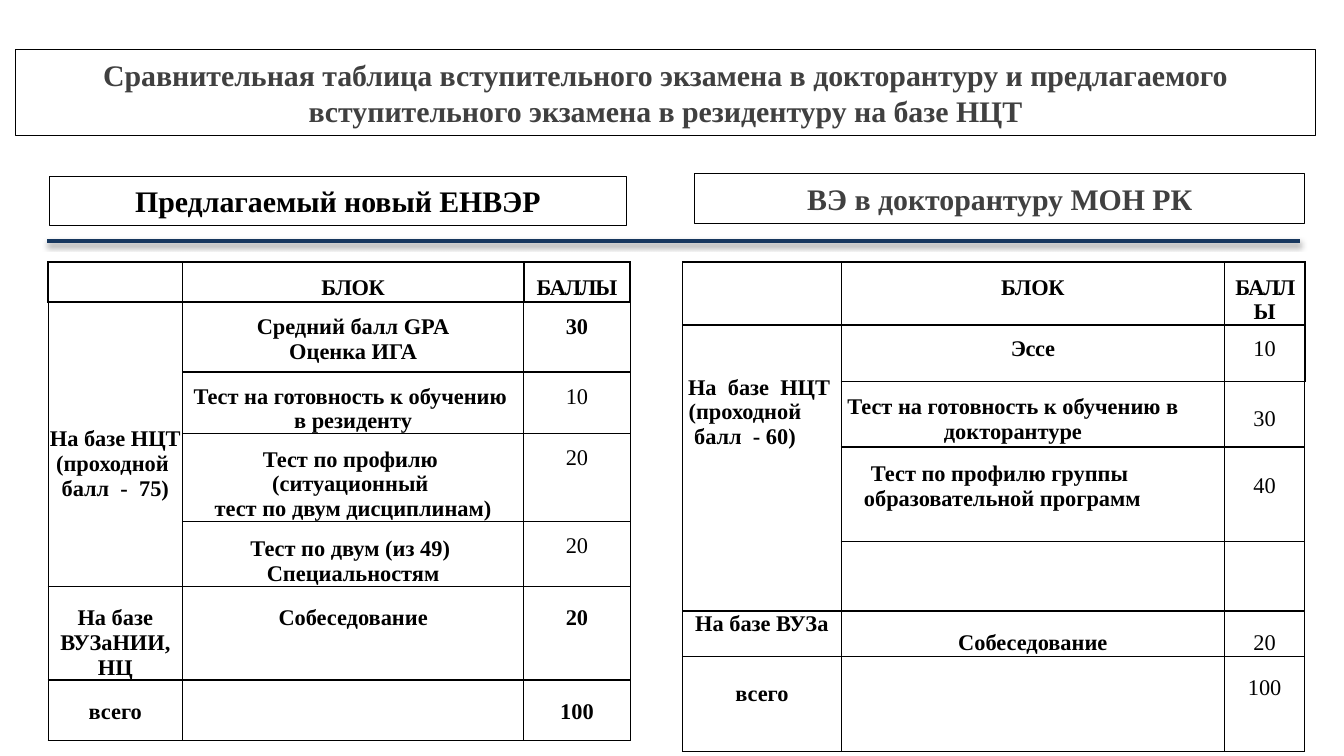
import lxml.etree
import pptx
import pptx.dml.color
import pptx.enum.shapes
import pptx.enum.text
import pptx.oxml
import pptx.oxml.ns
import pptx.util

Cm = pptx.util.Cm
Pt = pptx.util.Pt
FONT = "Times New Roman"
HEX = {"ink": "000000", "grey": "404040", "navy": "17375E", "paper": "FFFFFF"}
NS = pptx.oxml.ns.nsdecls("a")


def tint(name):
    return pptx.dml.color.RGBColor.from_string(HEX[name])


def write(par, text, size, color="ink", bold=True, track=0):
    """Add one centred run to a paragraph."""
    par.alignment = pptx.enum.text.PP_ALIGN.CENTER
    run = par.add_run()
    run.text = text
    font = run.font
    font.name, font.size, font.bold = FONT, Pt(size), bold
    font.color.rgb = tint(color)
    if track:
        font._element.set("spc", str(round(track * 100)))


def frame(box, place, text, color):
    """Place an outlined caption box and fill in its text."""
    box.left, box.top, box.width, box.height = map(Cm, place)
    box.line.color.rgb = tint("ink")
    box.line.width = Pt(0.5)
    body = box.text_frame
    body.word_wrap = True
    body.auto_size = pptx.enum.text.MSO_AUTO_SIZE.NONE
    body.vertical_anchor = pptx.enum.text.MSO_ANCHOR.MIDDLE
    write(body.paragraphs[0], text, 16, color)


def rule(slide, start, end, y):
    """Draw the navy divider with its soft shadow."""
    line = slide.shapes.add_connector(
        pptx.enum.shapes.MSO_CONNECTOR.STRAIGHT, Cm(start), Cm(y), Cm(end), Cm(y))
    line.line.color.rgb = tint("navy")
    line.line.width = Pt(2)
    line._element.spPr.append(pptx.oxml.parse_xml(
        f'<a:effectLst {NS}><a:outerShdw blurRad="{Pt(3.1)}" dist="{Pt(1.6)}" '
        f'dir="5400000" rotWithShape="0"><a:srgbClr val="{HEX["ink"]}">'
        '<a:alpha val="38000"/></a:srgbClr></a:outerShdw></a:effectLst>'))


def edge(cell, width):
    """Give a cell four black borders."""
    props = cell._tc.get_or_add_tcPr()
    for side in "LRTB":
        props.append(pptx.oxml.parse_xml(
            f'<a:ln{side} {NS} w="{Pt(width)}"><a:solidFill>'
            f'<a:srgbClr val="{HEX["ink"]}"/></a:solidFill></a:ln{side}>'))


def item(text="", top=0.0, bold=True, right=0.0, track=0):
    """Describe one cell; top and right are insets in cm."""
    return {"text": text, "top": top, "bold": bold, "right": right, "track": track}


def fill(cell, data, width):
    edge(cell, width)
    cell.fill.solid()
    cell.fill.fore_color.rgb = tint("paper")
    cell.margin_left = cell.margin_bottom = 0
    cell.margin_top = Cm(data["top"])
    cell.margin_right = Cm(data["right"])
    body = cell.text_frame
    if not data["text"]:
        # Keep empty cells from stretching their row
        body.paragraphs[0]._p.get_or_add_endParaRPr().set("sz", "1200")
        return
    for i, text in enumerate(data["text"].split("\n")):
        par = body.add_paragraph() if i else body.paragraphs[0]
        write(par, text, 12, bold=data["bold"], track=data["track"])


def grid(slide, left, top, cols, rows, cells, thick):
    """Build a table; the first `thick` rows have 1 pt borders."""
    table = slide.shapes.add_table(
        len(rows), len(cols), Cm(left), Cm(top), Cm(sum(cols)), Cm(sum(rows))).table
    for col, size in zip(table.columns, cols):
        col.width = Cm(size)
    for row, size in zip(table.rows, rows):
        row.height = Cm(size)
    for r, line in enumerate(cells):
        for c, data in enumerate(line):
            fill(table.cell(r, c), data, 1 if r < thick else 0.75)
    table.cell(1, 0).merge(table.cell(4, 0))
    return table


def main():
    deck = pptx.Presentation()
    deck.slide_width, deck.slide_height = Cm(25.4), Cm(14.29)
    slide = deck.slides.add_slide(deck.slide_layouts[5])

    # Title and the two captions
    frame(slide.shapes.title, (0.3, 0.94, 24.56, 1.63),
          "Сравнительная таблица вступительного экзамена в докторантуру и предлагаемого "
          "вступительного экзамена в резидентуру на базе НЦТ", "grey")
    for place, text, color in (
            ((0.94, 3.33, 10.9, 0.94), "Предлагаемый новый ЕНВЭР", "ink"),
            ((13.13, 3.28, 11.53, 0.94), "ВЭ в докторантуру МОН РК", "grey")):
        frame(slide.shapes.add_textbox(0, 0, 0, 0), place, text, color)

    head = [item(), item("БЛОК", 0.25, track=-0.2), item("БАЛЛЫ", 0.25, track=-0.7)]
    none = item()

    # Residency exam
    grid(slide, 0.91, 4.95, (2.54, 6.45, 2.01),
         (0.76, 1.32, 1.09, 1.55, 1.17, 1.22, 1.14), [
             head,
             [item("На базе НЦТ\n(проходной \nбалл  -  75)", 2.36),
              item("Средний балл GPA\nОценка ИГА", 0.23), item("30", 0.23)],
             [none, item("Тест на готовность к обучению \nв резиденту", 0.23),
              item("10", 0.23, False)],
             [none, item("Тест по профилю \n(ситуационный \nтест по двум дисциплинам)", 0.25),
              item("20", 0.23, False)],
             [none, item("Тест по двум (из 49) \nСпециальностям", 0.28),
              item("20", 0.23, False)],
             [item("На базе ВУЗаНИИ, НЦ", 0.36), item("Собеседование", 0.36),
              item("20", 0.36)],
             [item("всего", 0.36), none, item("100", 0.36)],
         ], 1)

    # Doctoral exam
    table = grid(slide, 12.9, 4.95, (3, 7.24, 1.52),
                 (0.76, 1.07, 1.24, 1.78, 1.32, 0.86, 1.8), [
        head,
        [item("На  базе  НЦТ \n(проходной\nбалл  - 60)", 0.95),
         item("Эссе", 0.23, track=-0.2), item("10", 0.23, False)],
        [none, item("Тест на готовность к обучению в докторантуре", 0.25, right=0.75),
         item("30", 0.47, False)],
        [none, item("Тест по профилю группы \nобразовательной программ", 0.28, right=1.15),
         item("40", 0.5, False)],
        [none] * 3,
        [item("На базе ВУЗа"), item("Собеседование", 0.36), item("20", 0.36, False)],
        [item("всего", 0.47), none, item("100", 0.36, False)],
    ], 2)
    # The middle line of the merged cell sits left of centre
    par = table.cell(1, 0).text_frame.paragraphs[1]
    par._p.get_or_add_pPr().set("marR", str(Cm(0.64)))

    rule(slide, 0.89, 24.56, 4.55)
    deck.save("out.pptx")


if __name__ == "__main__":
    main()
